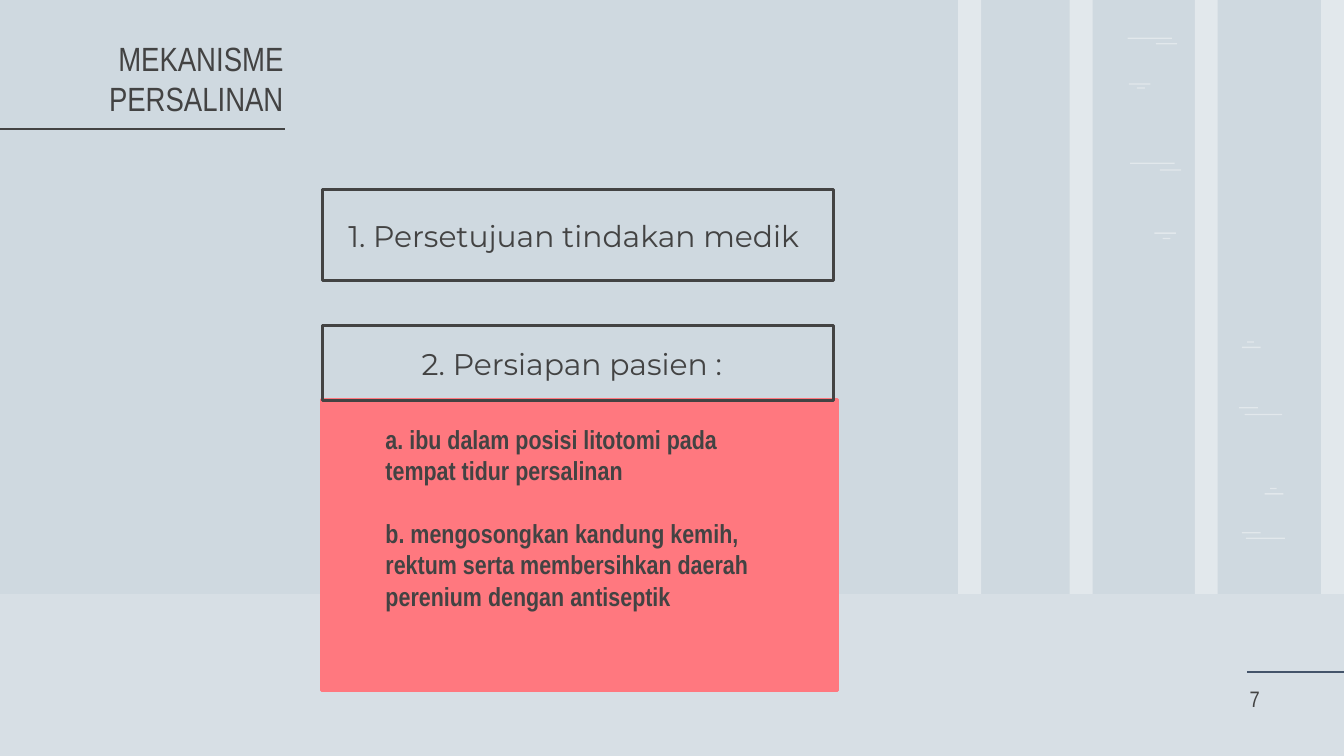
"""Build the slide on labour mechanism: consent and patient preparation."""
from typing import NamedTuple, Optional

from lxml import etree
from pptx import Presentation
from pptx.dml.color import RGBColor
from pptx.enum.shapes import MSO_CONNECTOR, MSO_SHAPE
from pptx.enum.text import MSO_ANCHOR, MSO_AUTO_SIZE, PP_ALIGN
from pptx.oxml.ns import qn
from pptx.util import Inches, Pt

LEFT, CENTER, RIGHT = PP_ALIGN.LEFT, PP_ALIGN.CENTER, PP_ALIGN.RIGHT
TOP, BOTTOM = MSO_ANCHOR.TOP, MSO_ANCHOR.BOTTOM
NO_AUTOFIT = MSO_AUTO_SIZE.NONE
RECTANGLE = MSO_SHAPE.RECTANGLE
STRAIGHT = MSO_CONNECTOR.STRAIGHT

SKY = RGBColor(0xCF, 0xD9, 0xE0)
WHITE = RGBColor(0xFF, 0xFF, 0xFF)
DARK = RGBColor(0x43, 0x43, 0x43)
NAVY = RGBColor(0x44, 0x54, 0x6A)
CORAL = RGBColor(0xFF, 0x78, 0x7F)

NARROW = "Arial Narrow"
MONTSERRAT = "Montserrat"
SLIDE_WIDTH = 10
SLIDE_HEIGHT = SLIDE_WIDTH * 9 / 16
HORIZON = 4.42
TRUNK_WIDTH = 0.17
STREAK_HEIGHT = 0.01


class Box(NamedTuple):
    left: float
    top: float
    width: float
    height: float


class Streak(NamedTuple):
    left: float
    top: float
    width: float


TRUNK_LEFTS = (7.13, 7.96, 8.89, 9.83)
BARK = (
    Streak(8.39, 0.28, 0.33), Streak(8.6, 0.32, 0.16),
    Streak(8.4, 0.62, 0.16), Streak(8.46, 0.65, 0.06),
    Streak(8.41, 1.21, 0.33), Streak(8.63, 1.26, 0.16),
    Streak(8.59, 1.73, 0.16), Streak(8.65, 1.77, 0.06),
    Streak(9.28, 2.54, 0.05), Streak(9.24, 2.58, 0.14),
    Streak(9.22, 3.03, 0.14), Streak(9.26, 3.08, 0.28),
    Streak(9.45, 3.63, 0.05), Streak(9.41, 3.67, 0.14),
    Streak(9.24, 3.96, 0.14), Streak(9.27, 4, 0.29),
)


def place(item, box: Box) -> None:
    item.left, item.top, item.width, item.height = map(Inches, box)


def add_panel(slide, box: Box, fill: Optional[RGBColor] = None,
              line: Optional[RGBColor] = None, opacity: int = 100) -> None:
    panel = slide.shapes.add_shape(RECTANGLE, *map(Inches, box))
    panel.shadow.inherit = False
    if fill is None:
        panel.fill.background()
    else:
        panel.fill.solid()
        panel.fill.fore_color.rgb = fill
        if opacity < 100:
            color = panel.fill._xPr.find(".//" + qn("a:srgbClr"))
            etree.SubElement(color, qn("a:alpha"), val=str(opacity * 1000))
    if line is None:
        panel.line.fill.background()
    else:
        panel.line.color.rgb = line
        panel.line.width = Pt(1.5)


def add_rule(slide, start: float, end: float, y: float, color: RGBColor) -> None:
    rule = slide.shapes.add_connector(
        STRAIGHT, Inches(start), Inches(y), Inches(end), Inches(y))
    rule.line.color.rgb = color
    rule.line.width = Pt(1.5)
    etree.SubElement(rule._element.spPr, qn("a:effectLst"))


def write(holder, *paragraphs: str, size: float, font: str = NARROW,
          bold: bool = False, align=LEFT, anchor=TOP, gap: float = 0) -> None:
    frame = holder.text_frame
    frame.word_wrap = True
    frame.auto_size = NO_AUTOFIT
    frame.vertical_anchor = anchor
    frame.margin_left = frame.margin_right = Inches(0.1)
    frame.margin_top = frame.margin_bottom = Inches(0.1)
    for index, text in enumerate(paragraphs):
        paragraph = frame.add_paragraph() if index else frame.paragraphs[0]
        paragraph.alignment = align
        paragraph.space_before = Pt(gap if index else 0)
        run = paragraph.add_run()
        run.text = text
        run.font.name = font
        run.font.size = Pt(size)
        run.font.bold = bold
        run.font.color.rgb = DARK


def add_text(slide, box: Box, *paragraphs: str, **style) -> None:
    write(slide.shapes.add_textbox(*map(Inches, box)), *paragraphs, **style)


def draw_forest(slide) -> None:
    for left in TRUNK_LEFTS:
        add_panel(slide, Box(left, 0, TRUNK_WIDTH, HORIZON), WHITE, opacity=40)
    for streak in BARK:
        add_panel(slide, Box(*streak, STREAK_HEIGHT), WHITE, opacity=40)
    ground = Box(0, HORIZON, SLIDE_WIDTH, SLIDE_HEIGHT - HORIZON)
    add_panel(slide, ground, WHITE, opacity=17)


def main() -> None:
    deck = Presentation()
    deck.slide_width, deck.slide_height = Inches(SLIDE_WIDTH), Inches(SLIDE_HEIGHT)
    slide = deck.slides.add_slide(deck.slide_layouts[5])
    slide.background.fill.solid()
    slide.background.fill.fore_color.rgb = SKY

    draw_forest(slide)
    add_rule(slide, 9.28, 10, 5, NAVY)
    add_rule(slide, -0.02, 2.12, 0.96, DARK)

    heading = slide.shapes.title
    place(heading, Box(-0.02, 0.66, 2.23, 0.32))
    write(heading, "MEKANISME PERSALINAN", size=18, align=RIGHT, anchor=BOTTOM)

    add_panel(slide, Box(2.4, 1.41, 3.8, 0.68), line=DARK)
    add_panel(slide, Box(2.39, 2.97, 3.84, 2.17), CORAL, CORAL)
    add_panel(slide, Box(2.4, 2.42, 3.8, 0.56), line=DARK)
    add_text(slide, Box(2.01, 1.52, 4.52, 0.47), "1. Persetujuan tindakan medik",
             size=16, font=MONTSERRAT, align=CENTER)
    add_text(slide, Box(2.72, 2.47, 3.07, 0.47), "2. Persiapan pasien :",
             size=16, font=MONTSERRAT, align=CENTER)
    add_text(slide, Box(2.77, 3.05, 3.07, 0.47),
             "a. ibu dalam posisi litotomi pada tempat tidur persalinan",
             "b. mengosongkan kandung kemih, rektum serta membersihkan "
             "daerah perenium dengan antiseptik",
             size=14, bold=True, gap=16.8)
    add_text(slide, Box(9.2, 4.97, 0.35, 0.43), "7", size=12, anchor=BOTTOM)

    deck.save("out.pptx")


if __name__ == "__main__":
    main()
